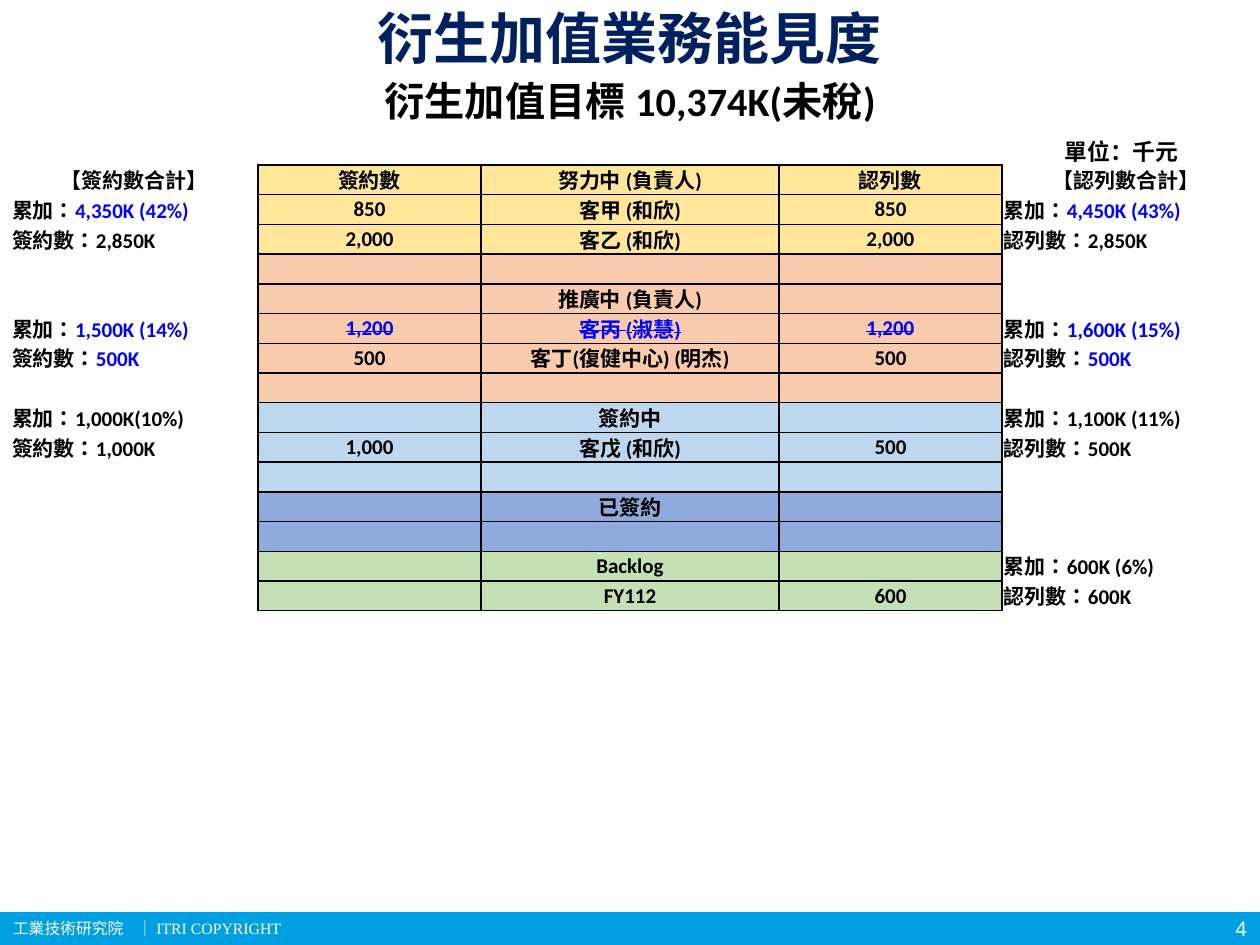
from dataclasses import dataclass

from lxml.etree import SubElement
from pptx import Presentation
from pptx.dml.color import RGBColor
from pptx.enum.shapes import MSO_SHAPE
from pptx.enum.text import MSO_ANCHOR, MSO_AUTO_SIZE, PP_ALIGN
from pptx.oxml.ns import qn
from pptx.util import Emu, Pt

PIXELS_PER_INCH = 126


@dataclass(frozen=True)
class Theme:
    title: str = "002060"
    text: str = "000000"
    accent: str = "0000FF"
    white: str = "FFFFFF"
    footer: str = "009FE2"
    trying: str = "FFE699"
    promoting: str = "F8CBAD"
    signing: str = "BDD7EE"
    signed: str = "8FAADC"
    backlog: str = "C5E0B4"
    body_font: str = "Calibri"
    heading_font: str = "Noto Sans CJK SC"
    footer_font: str = "Times New Roman"
    number_font: str = "Arial"
    title_size: int = 32
    subtitle_size: int = 23
    unit_size: int = 13
    table_size: int = 12
    footer_size: int = 9
    table_spacing: float = 0.97


THEME = Theme()
COLUMN_WIDTHS = [248, 223, 298, 223, 248]
ROWS = [
    (THEME.trying, ["【簽約數合計】", "簽約數", "努力中 (負責人)", "認列數", "【認列數合計】"]),
    (THEME.trying, ["累加：|4,350K (42%)", "850", "客甲 (和欣)", "850", "累加：|4,450K (43%)"]),
    (THEME.trying, ["簽約數：2,850K", "2,000", "客乙 (和欣)", "2,000", "認列數：2,850K"]),
    (THEME.promoting, [""] * 5),
    (THEME.promoting, ["", "", "推廣中 (負責人)", "", ""]),
    (THEME.promoting, ["累加：|1,500K (14%)", "1,200", "客丙 (淑慧)", "1,200", "累加：|1,600K (15%)"]),
    (THEME.promoting, ["簽約數：|500K", "500", "客丁(復健中心) (明杰)", "500", "認列數：|500K"]),
    (THEME.promoting, [""] * 5),
    (THEME.signing, ["累加：1,000K(10%)", "", "簽約中", "", "累加：1,100K (11%)"]),
    (THEME.signing, ["簽約數：1,000K", "1,000", "客戊 (和欣)", "500", "認列數：500K"]),
    (THEME.signing, [""] * 5),
    (THEME.signed, ["", "", "已簽約", "", ""]),
    (THEME.signed, [""] * 5),
    (THEME.backlog, ["", "", "Backlog", "", "累加：600K (6%)"]),
    (THEME.backlog, ["", "", "FY112", "600", "認列數：600K"]),
]
STRUCK_ROW = 5


def px(value):
    return Emu(round(value * 914400 / PIXELS_PER_INCH))


def write_text(frame, text, size, font=THEME.body_font, color=THEME.text, bold=True,
               align=PP_ALIGN.CENTER, strike=False, tab=None, spacing=None):
    paragraph = frame.paragraphs[0]
    paragraph.alignment = align
    paragraph.line_spacing = spacing
    if tab:
        properties = paragraph._p.get_or_add_pPr()
        stops = SubElement(properties, qn("a:tabLst"))
        SubElement(stops, qn("a:tab"), pos=str(px(tab)), algn="l")
    if not text:
        SubElement(paragraph._p, qn("a:endParaRPr"), sz=str(size * 100))
    for index, part in enumerate(text.split("|") if text else []):
        run = paragraph.add_run()
        run.text = part
        run.font.size = Pt(size)
        run.font.bold = bold
        run.font.name = font
        run.font.color.rgb = RGBColor.from_string(THEME.accent if index else color)
        properties = run._r.get_or_add_rPr()
        SubElement(properties, qn("a:ea"), typeface=THEME.heading_font)
        if font == THEME.body_font:
            properties.set("lang", "zh-TW")
        if strike:
            properties.set("strike", "sngStrike")


def format_frame(frame, margins=(0, 0, 0, 0)):
    frame.word_wrap = True
    frame.auto_size = MSO_AUTO_SIZE.NONE
    frame.vertical_anchor = MSO_ANCHOR.MIDDLE
    frame.margin_left, frame.margin_top, frame.margin_right, frame.margin_bottom = map(px, margins)


def add_label(slide, box, text, size, margins=(0, 0, 0, 0), **text_format):
    shape = slide.shapes.add_textbox(*map(px, box))
    format_frame(shape.text_frame, margins)
    write_text(shape.text_frame, text, size, **text_format)


def add_heading(slide, box):
    left, top, width, height = box
    title = slide.shapes.title
    title.left, title.top, title.width, title.height = map(px, (left, top, width, 74))
    format_frame(title.text_frame)
    write_text(title.text_frame, "衍生加值業務能見度", THEME.title_size,
               font=THEME.heading_font, color=THEME.title)
    add_label(slide, (left, top + 76, width, height - 76), "衍生加值目標 10,374K(未稅)",
              THEME.subtitle_size)


def set_borders(cell, visible_sides):
    properties = cell._tc.get_or_add_tcPr()
    for side in "LRTB":
        line = SubElement(properties, qn(f"a:ln{side}"), w=str(Pt(1)))
        if side in visible_sides:
            fill = SubElement(line, qn("a:solidFill"))
            SubElement(fill, qn("a:srgbClr"), val=THEME.text)
        else:
            SubElement(line, qn("a:noFill"))


def format_cell(cell, text, column, band, strike):
    last = len(COLUMN_WIDTHS) - 1
    is_total = column in (0, last)
    set_borders(cell, {0: "R", last: "L"}.get(column, "LRTB"))
    cell.fill.solid()
    cell.fill.fore_color.rgb = RGBColor.from_string(THEME.white if is_total else band)
    cell.vertical_anchor = MSO_ANCHOR.MIDDLE
    cell.margin_left = cell.margin_right = px(2)
    cell.margin_top = cell.margin_bottom = px(0)
    struck = strike and not is_total
    centered = not is_total or text.startswith("【")
    write_text(cell.text_frame, text, THEME.table_size, strike=struck,
               color=THEME.accent if struck else THEME.text,
               align=PP_ALIGN.CENTER if centered else PP_ALIGN.LEFT,
               spacing=THEME.table_spacing)


def add_forecast_table(slide, box):
    height = box[3]
    table = slide.shapes.add_table(len(ROWS), len(COLUMN_WIDTHS), *map(px, box)).table
    table.first_row = table.horz_banding = False
    for column, width in zip(table.columns, COLUMN_WIDTHS):
        column.width = px(width)
    for row_index, (band, texts) in enumerate(ROWS):
        table.rows[row_index].height = px(height / len(ROWS))
        for column_index, text in enumerate(texts):
            format_cell(table.cell(row_index, column_index), text, column_index, band,
                        row_index == STRUCK_ROW)


def add_footer(slide, box):
    left, top, width, height = box
    bar = slide.shapes.add_shape(MSO_SHAPE.RECTANGLE, *map(px, box))
    bar.shadow.inherit = False
    bar.fill.solid()
    bar.fill.fore_color.rgb = RGBColor.from_string(THEME.footer)
    bar.line.fill.background()
    add_label(slide, (left + width - 73, top, 73, height), "4", THEME.table_size,
              margins=(13, 0, 13, 0), font=THEME.number_font, color=THEME.white,
              bold=False, align=PP_ALIGN.RIGHT)
    add_label(slide, (left, top - 16, 1126, 50), "工業技術研究院\t│ ITRI COPYRIGHT",
              THEME.footer_size, margins=(13, 14, 13, 0), font=THEME.footer_font,
              color=THEME.white, bold=False, align=PP_ALIGN.LEFT, tab=124)


def main():
    presentation = Presentation()
    presentation.slide_width, presentation.slide_height = px(1260), px(945)
    slide = presentation.slides.add_slide(presentation.slide_layouts[5])
    add_footer(slide, (0, 912, 1260, 33))
    add_forecast_table(slide, (10, 165, 1240, 446))
    add_heading(slide, (59, 0, 1142, 125))
    add_label(slide, (1047, 134, 149, 35), "單位：千元", THEME.unit_size,
              font=THEME.heading_font)
    presentation.save("out.pptx")


if __name__ == "__main__":
    main()
